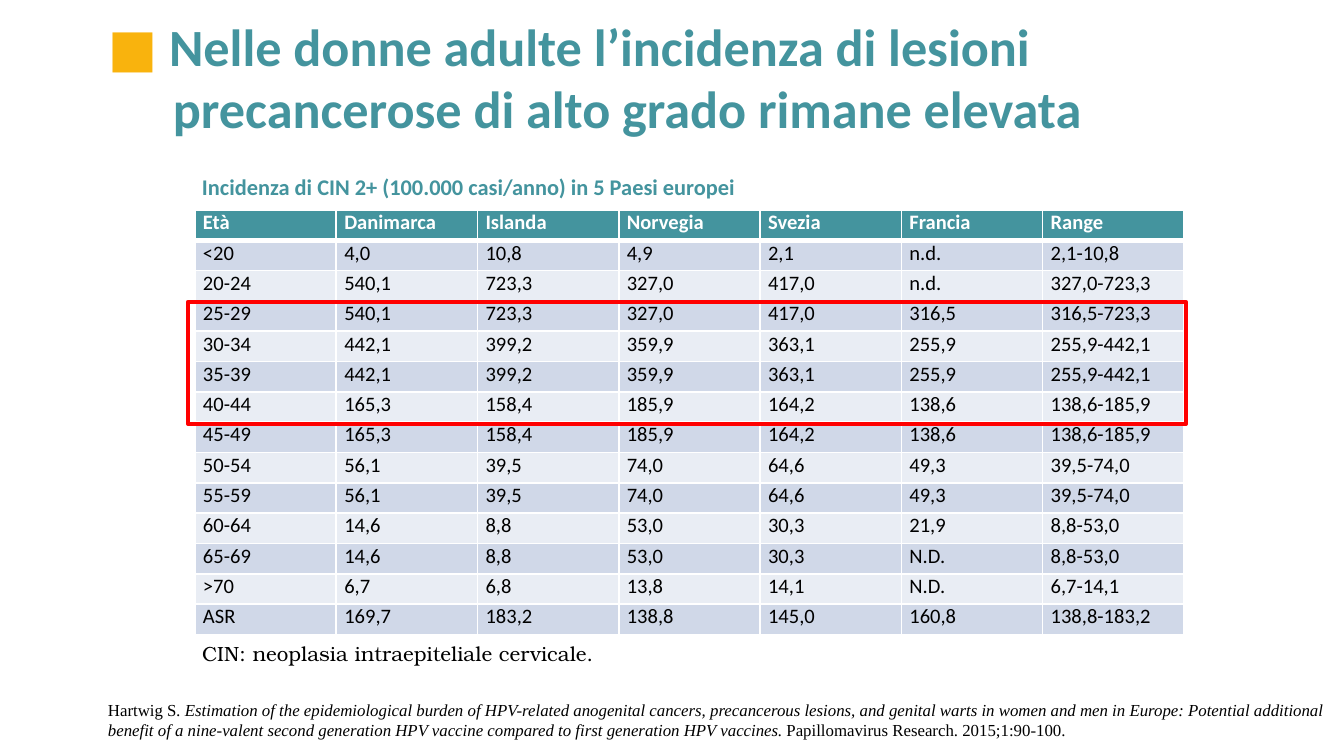
from lxml.etree import SubElement
from pptx import Presentation
from pptx.dml.color import RGBColor
from pptx.enum.shapes import MSO_SHAPE as Shape
from pptx.enum.text import MSO_ANCHOR as Anchor, MSO_AUTO_SIZE as AutoSize, PP_ALIGN as Align
from pptx.oxml.ns import qn
from pptx.util import Emu, Pt

EMU_PER_PX = 914400 / 134.4
TEAL = RGBColor(0x44, 0x94, 0x9E)
AMBER = RGBColor(0xF9, 0xB3, 0x0D)
RED = RGBColor(0xFF, 0x00, 0x00)
BLACK = RGBColor(0x00, 0x00, 0x00)
WHITE = RGBColor(0xFF, 0xFF, 0xFF)
BANDS = (RGBColor(0xE9, 0xED, 0xF4), RGBColor(0xD0, 0xD8, 0xE8))

HEADER = ("Età", "Danimarca", "Islanda", "Norvegia", "Svezia", "Francia", "Range")
INCIDENCE = (
    ("<20", "4,0", "10,8", "4,9", "2,1", "n.d.", "2,1-10,8"),
    ("20-24", "540,1", "723,3", "327,0", "417,0", "n.d.", "327,0-723,3"),
    ("25-29", "540,1", "723,3", "327,0", "417,0", "316,5", "316,5-723,3"),
    ("30-34", "442,1", "399,2", "359,9", "363,1", "255,9", "255,9-442,1"),
    ("35-39", "442,1", "399,2", "359,9", "363,1", "255,9", "255,9-442,1"),
    ("40-44", "165,3", "158,4", "185,9", "164,2", "138,6", "138,6-185,9"),
    ("45-49", "165,3", "158,4", "185,9", "164,2", "138,6", "138,6-185,9"),
    ("50-54", "56,1", "39,5", "74,0", "64,6", "49,3", "39,5-74,0"),
    ("55-59", "56,1", "39,5", "74,0", "64,6", "49,3", "39,5-74,0"),
    ("60-64", "14,6", "8,8", "53,0", "30,3", "21,9", "8,8-53,0"),
    ("65-69", "14,6", "8,8", "53,0", "30,3", "N.D.", "8,8-53,0"),
    (">70", "6,7", "6,8", "13,8", "14,1", "N.D.", "6,7-14,1"),
    ("ASR", "169,7", "183,2", "138,8", "145,0", "160,8", "138,8-183,2"),
)
CITATION = (
    ("Hartwig S", False),
    (". Estimation of the epidemiological burden of HPV-related anogenital cancers, "
     "precancerous lesions, and genital warts in women and men in Europe: Potential "
     "additional benefit of a nine-valent second generation HPV vaccine compared to "
     "first generation HPV vaccines. ", True),
    ("Papillomavirus Research. 2015;1:90-100.", False),
)


def px(length):
    """Turn slide pixels into EMU."""
    return Emu(round(length * EMU_PER_PX))


def set_font(paragraph, name, size, color, bold=False):
    """Format all runs of a paragraph."""
    font = paragraph.font
    font.name, font.size, font.bold = name, Pt(size), bold
    font.color.rgb = color


def set_frame(frame, anchor=Anchor.TOP, wrap=True):
    """Give a text frame the common insets."""
    frame.margin_left = frame.margin_right = px(10)
    frame.margin_top = frame.margin_bottom = px(5)
    frame.vertical_anchor = anchor
    frame.word_wrap = wrap
    frame.auto_size = AutoSize.NONE


def add_title(slide):
    """Fill the title with a square marker and two hanging lines."""
    title = slide.shapes.title
    title.left, title.top, title.width, title.height = px(98), px(9), px(1210), px(137)
    set_frame(title.text_frame)
    paragraph = title.text_frame.paragraphs[0]
    paragraph.alignment = Align.LEFT
    properties = paragraph._p.get_or_add_pPr()
    properties.set("marL", str(px(65)))
    properties.set("indent", str(-px(65)))
    set_font(paragraph, "Calibri", 28, TEAL, bold=True)
    marker = paragraph.add_run()
    marker.text = "■ "
    marker.font.color.rgb = AMBER
    paragraph.add_run().text = "Nelle donne adulte l’incidenza di lesioni"
    paragraph.add_line_break()
    paragraph.add_run().text = "precancerose di alto grado rimane elevata"


def add_text(slide, box, runs, font, anchor=Anchor.TOP, wrap=True):
    """Add a one-paragraph text box from (text, italic) runs."""
    shape = slide.shapes.add_textbox(*map(px, box))
    set_frame(shape.text_frame, anchor, wrap)
    paragraph = shape.text_frame.paragraphs[0]
    set_font(paragraph, *font)
    for text, italic in runs:
        run = paragraph.add_run()
        run.text = text
        run.font.italic = italic


def set_borders(cell, top, bottom):
    """Draw white cell borders, with top and bottom widths in points."""
    properties = cell._tc.get_or_add_tcPr()
    for side, width in (("L", 1), ("R", 1), ("T", top), ("B", bottom)):
        line = SubElement(properties, qn(f"a:ln{side}"), w=str(Pt(width)))
        fill = SubElement(line, qn("a:solidFill"))
        SubElement(fill, qn("a:srgbClr"), val=str(WHITE))


def add_incidence_table(slide):
    """Add the banded table of incidence by age and country."""
    rows = (HEADER, *INCIDENCE)
    width, height = px(989), px(425)
    table = slide.shapes.add_table(
        len(rows), len(HEADER), px(195), px(210), width, height).table
    for column in table.columns:
        column.width = width // len(HEADER)
    for row in table.rows:
        row.height = height // len(rows)
    for row_index, values in enumerate(rows):
        is_header = row_index == 0
        for column_index, value in enumerate(values):
            cell = table.cell(row_index, column_index)
            set_borders(cell, top=3 if row_index == 1 else 1, bottom=3 if is_header else 1)
            cell.fill.solid()
            cell.fill.fore_color.rgb = TEAL if is_header else BANDS[row_index % 2]
            cell.margin_left = cell.margin_right = px(8)
            cell.margin_top = cell.margin_bottom = 0
            cell.text = value
            set_font(cell.text_frame.paragraphs[0], "Calibri", 11,
                     WHITE if is_header else BLACK, bold=is_header)


def add_highlight(slide, box):
    """Frame table rows with a red outline."""
    shape = slide.shapes.add_shape(Shape.RECTANGLE, *map(px, box))
    shape.shadow.inherit = False
    shape.fill.background()
    shape.line.color.rgb = RED
    shape.line.width = Pt(2.25)


def main():
    """Build and save the slide."""
    presentation = Presentation()
    presentation.slide_width, presentation.slide_height = px(1344), px(756)
    slide = presentation.slides.add_slide(presentation.slide_layouts[5])
    add_title(slide)
    add_incidence_table(slide)
    add_text(slide, (192, 636, 1000, 35),
             [("CIN: neoplasia intraepiteliale cervicale.", False)],
             ("TeX Gyre Bonum", 11, BLACK))
    add_text(slide, (192, 168, 563, 38),
             [("Incidenza di CIN 2+ (100.000 casi/anno) in 5 Paesi europei", False)],
             ("Calibri", 12, TEAL, True), wrap=False)
    add_highlight(slide, (188, 302, 998, 122))
    add_text(slide, (98, 684, 1246, 72), CITATION,
             ("Times New Roman", 9, BLACK), anchor=Anchor.MIDDLE)
    presentation.save("out.pptx")


if __name__ == "__main__":
    main()
